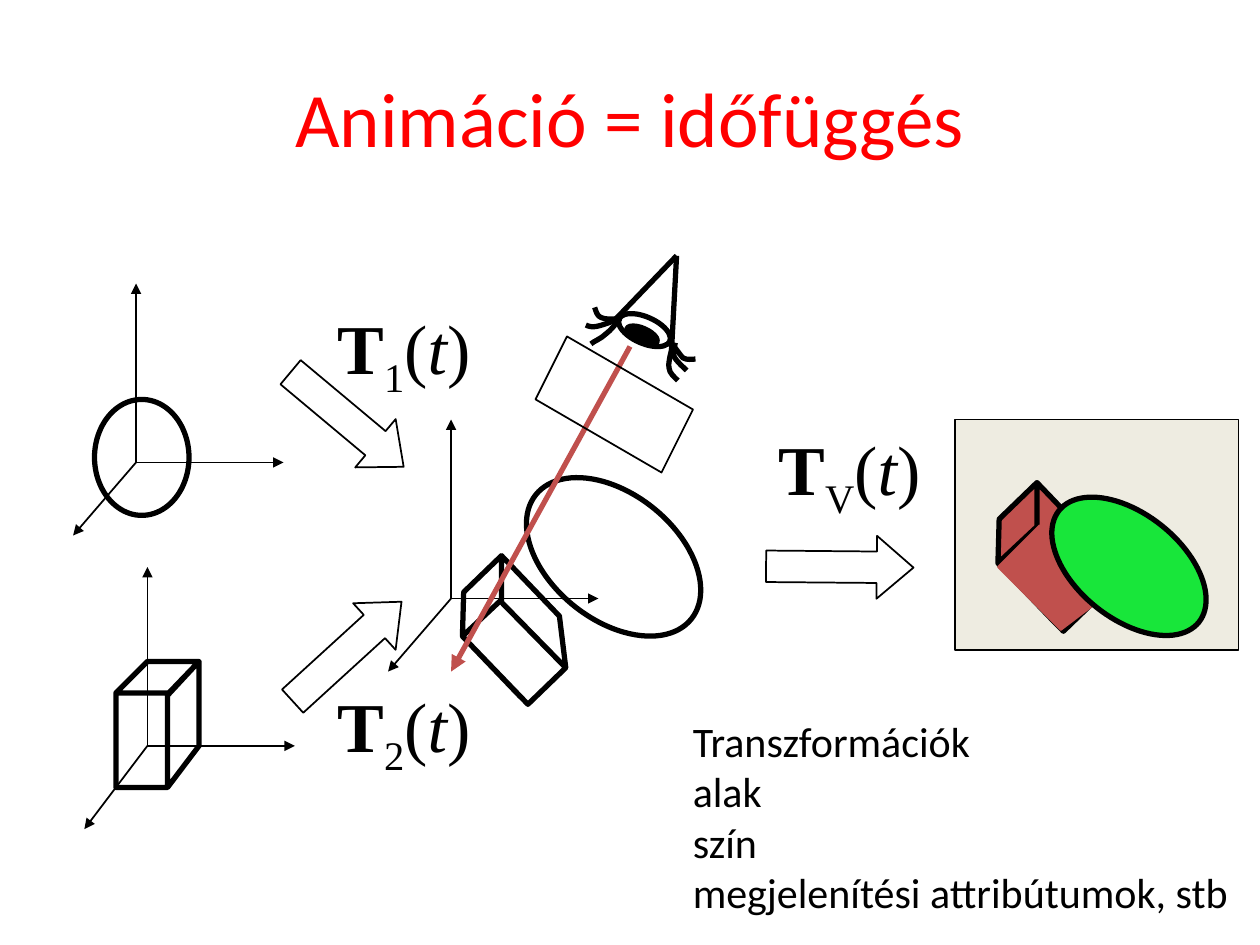
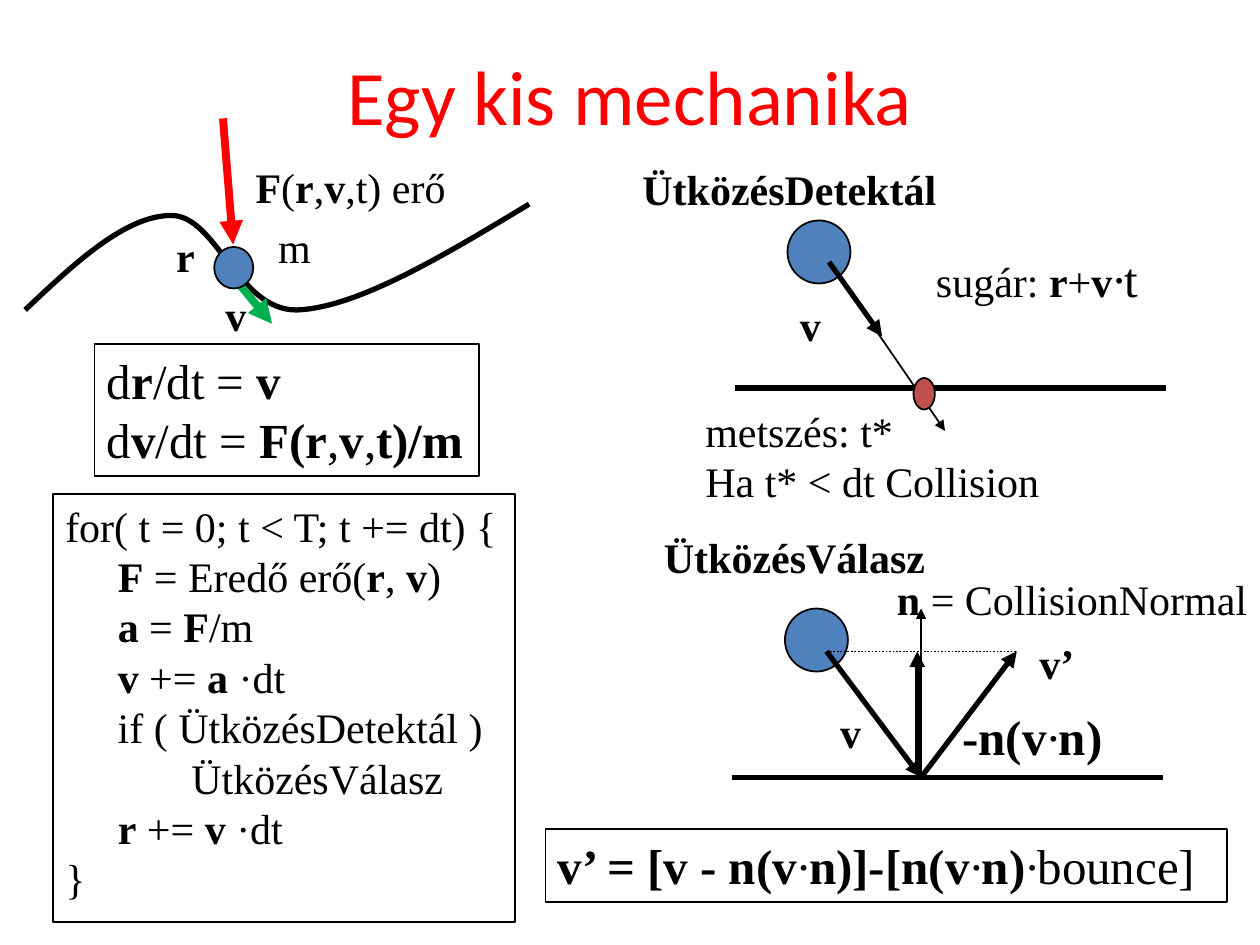
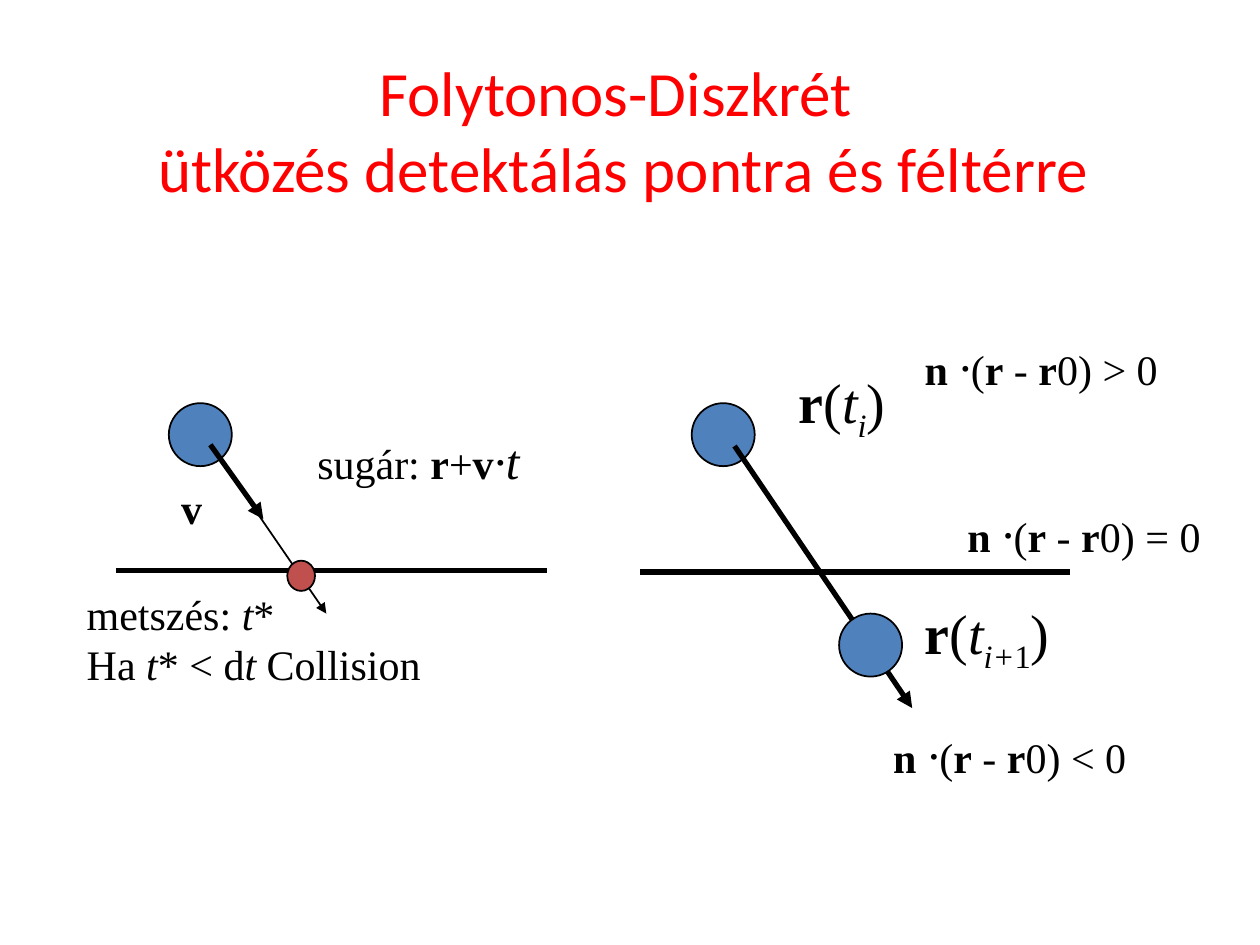
from lxml.etree import SubElement
from pptx import Presentation
from pptx.dml.color import RGBColor
from pptx.enum.dml import MSO_LINE
from pptx.enum.shapes import MSO_CONNECTOR, MSO_SHAPE
from pptx.enum.text import MSO_ANCHOR, MSO_AUTO_SIZE, PP_ALIGN
from pptx.oxml.ns import qn
from pptx.util import Inches, Pt

BLACK, WHITE, RED = "000000", "FFFFFF", "FF0000"
BLUE, BRICK, GREEN, LIME, CREAM = "4F81BD", "C0504D", "00B050", "18E63A", "EEECE1"
THIN, THICK, FORCE = 1, 3, 4.5
SERIF = "Times New Roman"
TITLE_FORMAT = {"name": "Calibri", "size": Pt(44)}
LABEL_FORMAT = {"name": SERIF, "size": Pt(24)}

UPRIGHT_BOX = [(0.92, 6.17), (0.92, 5.5), (1.17, 5.25), (1.58, 5.25), (1.34, 5.5),
               (0.92, 5.5), (0.92, 6.25), (1.33, 6.25), (1.58, 5.92), (1.58, 5.25),
               (1.33, 5.52), (1.33, 6.25)]
TILTED_BOX = [(4.13, 5.53), (3.67, 5.05), (3.68, 4.7), (3.98, 4.41), (3.98, 4.76),
              (3.67, 5.05), (4.19, 5.59), (4.49, 5.3), (4.44, 4.89), (3.98, 4.41),
              (3.98, 4.78), (4.49, 5.3)]
VIEW_WINDOW = [(4.25, 3.17), (4.5, 2.67), (5.5, 3.25), (5.25, 3.75), (4.25, 3.17)]
BOX_FRONT = [(7.92, 4.5), (8.25, 4.17), (8.75, 4.75), (8.42, 5), (7.92, 4.5)]
# Each lash is a start point followed by three points per Bezier segment.
LASHES = [
    [(5.36, 2.72), (5.35, 2.76), (5.34, 2.8), (5.35, 2.83), (5.37, 2.87), (5.43, 2.92), (5.45, 2.94)],
    [(5.33, 2.77), (5.33, 2.79), (5.3, 2.87), (5.31, 2.92), (5.31, 2.96), (5.36, 3), (5.38, 3.02)],
    [(4.92, 2.53), (4.88, 2.58), (4.85, 2.62), (4.81, 2.65), (4.77, 2.69), (4.71, 2.71), (4.69, 2.73)],
    [(4.92, 2.53), (4.89, 2.54), (4.79, 2.58), (4.74, 2.59), (4.7, 2.6), (4.67, 2.59), (4.65, 2.58)],
    [(4.92, 2.53), (4.86, 2.53), (4.81, 2.54), (4.77, 2.52), (4.74, 2.51), (4.73, 2.47), (4.72, 2.44)],
    [(5.35, 2.75), (5.36, 2.76), (5.4, 2.82), (5.42, 2.84), (5.45, 2.86), (5.5, 2.85), (5.52, 2.85)],
]
TRAJECTORY = [(0.2, 2.46), (0.6, 2.08), (1, 1.71), (1.36, 1.71), (1.72, 1.71), (1.89, 2.47),
              (2.36, 2.46), (2.84, 2.44), (3.52, 2.03), (4.2, 1.62)]


def rgb(hex_color):
    return RGBColor.from_string(hex_color)


def bold(text):
    return text, {"bold": True}


def italic(text, **extra):
    return text, {"italic": True, **extra}


def sub(text, **extra):
    return text, {"baseline": -25000, **extra}


DOT = italic("·")
BIG_DOT = italic("·", size=Pt(28))


def style_font(run, fmt, color):
    for name, value in fmt.items():
        if name == "baseline":
            run._r.get_or_add_rPr().set(name, str(value))
        else:
            setattr(run.font, name, value)
    run.font.color.rgb = rgb(color)


def write(frame, paragraphs, size=24):
    """Fill a frame; a paragraph is a list of plain strings and (text, format) runs."""
    frame.word_wrap = False
    frame.auto_size = MSO_AUTO_SIZE.SHAPE_TO_FIT_TEXT
    frame.vertical_anchor = MSO_ANCHOR.TOP
    for number, pieces in enumerate(paragraphs):
        paragraph = frame.add_paragraph() if number else frame.paragraphs[0]
        paragraph.alignment = PP_ALIGN.LEFT
        if pieces[0][0] == "\t":
            tabs = SubElement(paragraph._p.get_or_add_pPr(), qn("a:tabLst"))
            SubElement(tabs, qn("a:tab"), pos=str(Inches(1)), algn="l")
        for piece in pieces:
            text, fmt = (piece, {}) if isinstance(piece, str) else piece
            run = paragraph.add_run()
            run.text = text
            style_font(run, {**LABEL_FORMAT, "size": Pt(size), **fmt}, BLACK)


def title(slide, text, box, size=44):
    frame = slide.shapes.add_textbox(*map(Inches, box)).text_frame
    frame.word_wrap = True
    frame.vertical_anchor = MSO_ANCHOR.MIDDLE
    paragraph = frame.paragraphs[0]
    paragraph.text = text
    paragraph.alignment = PP_ALIGN.CENTER
    for run in paragraph.runs:
        style_font(run, {**TITLE_FORMAT, "size": Pt(size)}, RED)


def label(slide, left, top, width, *paragraphs, size=24):
    box = slide.shapes.add_textbox(*map(Inches, (left, top, width, 0.5 * len(paragraphs))))
    write(box.text_frame, paragraphs, size)


def paint(shape, fill, line, width):
    shape.shadow.inherit = False
    if fill:
        shape.fill.solid()
        shape.fill.fore_color.rgb = rgb(fill)
    else:
        shape.fill.background()
    shape.line.color.rgb = rgb(line)
    shape.line.width = Pt(width)


def preset(slide, kind, box, fill=None, width=THIN, rotation=0):
    shape = slide.shapes.add_shape(kind, *map(Inches, box))
    paint(shape, fill, BLACK, width)
    shape.rotation = rotation
    return shape


def ellipse(slide, box, fill=None, width=THIN, rotation=0):
    preset(slide, MSO_SHAPE.OVAL, box, fill, width, rotation)


def ball(slide, left, top):
    ellipse(slide, (left, top, 0.5, 0.5), BLUE)


def block_arrow(slide, left, top, rotation):
    arrow = preset(slide, MSO_SHAPE.RIGHT_ARROW, (left, top, 1.17, 0.5), rotation=rotation)
    arrow.adjustments[1] = 0.583


def framed_text(slide, box, *paragraphs, size=24):
    frame = preset(slide, MSO_SHAPE.RECTANGLE, box)
    write(frame.text_frame, paragraphs, size)


def line(slide, start, end, width=THIN, color=BLACK, head=False, dash=None):
    connector = slide.shapes.add_connector(MSO_CONNECTOR.STRAIGHT, *map(Inches, (*start, *end)))
    connector.line.color.rgb = rgb(color)
    connector.line.width = Pt(width)
    if dash:
        connector.line.dash_style = dash
    if head:
        SubElement(connector.line._get_or_add_ln(), qn("a:tailEnd"), type="triangle")
    SubElement(connector._element.spPr, qn("a:effectLst"))


def arrow(slide, start, end, width=THIN, color=BLACK):
    line(slide, start, end, width, color, head=True)


def outline(slide, points, fill=None, color=BLACK, width=THICK):
    start, *rest = [(Inches(x), Inches(y)) for x, y in points]
    builder = slide.shapes.build_freeform(*start)
    builder.add_line_segments(rest, close=points[0] == points[-1])
    shape = builder.convert_to_shape()
    paint(shape, fill, color, width)
    return shape


def curve(slide, controls):
    """Draw joined cubic Bezier segments by merging each three line steps into one."""
    shape = outline(slide, controls)
    steps = list(shape._element.iter(qn("a:lnTo")))
    for first in range(0, len(steps), 3):
        bezier, *others = steps[first:first + 3]
        bezier.tag = qn("a:cubicBezTo")
        for step in others:
            bezier.append(step[0])
            step.getparent().remove(step)


def axes(slide, x, y, depth=0.58):
    for dx, dy in ((0, -1.42), (1.17, 0), (-0.5, depth)):
        arrow(slide, (x, y), (x + dx, y + dy))


def eye(slide):
    for corner in ((5.33, 2.77), (4.86, 2.56)):
        line(slide, (5.37, 2.03), corner, THICK)
    ellipse(slide, (5.01, 2.4, 0.21, 0.44), WHITE, THICK, 113.8)
    ellipse(slide, (5.04, 2.53, 0.11, 0.26), BLACK, THICK, 113.8)
    for lash in LASHES:
        curve(slide, lash)


def ray_collision(slide, x, y, hit_box, ray_time, *result):
    """Ball at x, y whose ray meets the plane below it."""
    ball(slide, x, y)
    center = (x + 0.33, y + 0.33)
    arrow(slide, center, (x + 0.75, y + 0.92), THICK)
    line(slide, (x - 0.42, y + 1.33), (x + 3, y + 1.33), THICK)
    label(slide, x, y + 0.58, 0.37, [bold("v")])
    arrow(slide, center, (x + 1.25, y + 1.67))
    label(slide, x + 1.08, y + 0.17, 1.84, ["sugár: ", bold("r"), "+", bold("v"), *ray_time])
    ellipse(slide, hit_box, BRICK)
    label(slide, x - 0.75, y + 1.42, 2.86, *result)


def animation_slide(slide):
    title(slide, "Animáció = időfüggés", (0.5, 0.3, 9, 1.25))
    axes(slide, 1.08, 3.67)
    ellipse(slide, (0.75, 3.17, 0.75, 0.92), width=THICK)
    axes(slide, 1.17, 5.92, depth=0.66)
    outline(slide, UPRIGHT_BOX)
    axes(slide, 3.58, 4.75)
    ellipse(slide, (4.08, 3.92, 1.58, 1), width=THICK, rotation=38.6)
    outline(slide, TILTED_BOX)
    eye(slide)
    arrow(slide, (5, 2.75), (3.58, 5.33), THICK, BRICK)
    for left, top, rotation in ((2.17, 3.08, 39.9), (2.17, 4.92, 317.6), (6.08, 4.25, 0.5)):
        block_arrow(slide, left, top, rotation)
    outline(slide, VIEW_WINDOW, width=THIN)
    for index, left, top, width in (("1", 2.58, 2.37, 1.28), ("2", 2.58, 5.37, 1.28),
                                    ("V", 6.08, 3.33, 1.37)):
        label(slide, left, top, width, [bold("T"), sub(index), "(", italic("t"), ")"], size=40)
    preset(slide, MSO_SHAPE.RECTANGLE, (7.58, 3.33, 2.25, 1.83), CREAM)
    outline(slide, [(x + 4.25, y - 0.58) for x, y in TILTED_BOX], BRICK)
    outline(slide, BOX_FRONT, BRICK, BRICK, THIN)
    ellipse(slide, (8.25, 4.08, 1.42, 0.83), LIME, THICK, 38.6)
    time_dependent = ("Transzformációk", "alak", "szín", "megjelenítési attribútumok, stb")
    label(slide, 5.4, 5.63, 4.5, *[[(text, {"name": "Calibri"})] for text in time_dependent])


def bounce(slide):
    ball(slide, 6.23, 4.83)
    impact, start, end = (7.31, 6.17), (6.56, 5.17), (8.07, 5.17)
    arrow(slide, start, impact, THICK)
    line(slide, (5.81, 6.17), (9.23, 6.17), THICK)
    arrow(slide, impact, end, THICK)
    arrow(slide, impact, (7.31, 4.83))
    line(slide, start, end, dash=MSO_LINE.ROUND_DOT)
    arrow(slide, (7.28, 6.11), (7.28, 5.17), THICK)
    label(slide, 6.57, 5.56, 0.37, [bold("v")])
    label(slide, 7.02, 4.5, 2.98, [bold("n"), " = CollisionNormal"])
    label(slide, 8.15, 5.01, 0.48, [bold("v’")])
    label(slide, 7.54, 5.56, 1.32, [bold("-n(v"), DOT, bold("n)")], size=28)
    framed_text(slide, (4.33, 6.58, 5.41, 0.58),
                [bold("v’ = [v - n(v"), DOT, bold("n)]-[n(v"), DOT, bold("n)"), DOT, "bounce]"],
                size=28)


def mechanics_slide(slide):
    title(slide, "Egy kis mechanika", (0, 0.13, 10, 1.25))
    arrow(slide, (1.77, 0.94), (1.85, 1.94), FORCE, RED)
    label(slide, 1.93, 1.23, 1.72, [bold("F"), "(", bold("r"), ",", bold("v"), ",t) erő"])
    label(slide, 2.11, 1.71, 0.46, ["m"])
    framed_text(slide, (0.42, 3.92, 3.67, 3.4),
                ["for( t = 0; t < T; t += dt) {"],
                ["     ", bold("F"), " = Eredő erő(", bold("r"), ", ", bold("v"), ")"],
                ["     ", bold("a"), " = ", bold("F"), "/m"],
                ["     ", bold("v"), " += ", bold("a "), "·dt"],
                ["     if ( ÜtközésDetektál )"],
                ["\tÜtközésVálasz"],
                ["     ", bold("r"), " += ", bold("v "), "·dt"],
                ["}"])
    curve(slide, TRAJECTORY)
    bounce(slide)
    ray_collision(slide, 6.25, 1.75, (7.25, 3, 0.17, 0.25), [BIG_DOT, ("t", {"size": Pt(28)})],
                  ["metszés: t*"], ["Ha t* < dt Collision"])
    label(slide, 5, 1.25, 2.53, [bold("ÜtközésDetektál")])
    label(slide, 5.17, 4.17, 2.28, [bold("ÜtközésVálasz")])
    framed_text(slide, (0.75, 2.73, 3.05, 1.05),
                ["d", bold("r"), "/dt = ", bold("v")],
                ["d", bold("v"), "/dt = ", bold("F(r"), ",", bold("v"), ",", bold("t)/m")],
                size=28)
    arrow(slide, (1.77, 2.1), (2.16, 2.57), FORCE, GREEN)
    label(slide, 1.3, 1.78, 0.35, [bold("r")])
    ellipse(slide, (1.7, 1.96, 0.31, 0.33), BLUE)
    label(slide, 1.69, 2.25, 0.37, [bold("v")])


def detection_slide(slide):
    title(slide, "Folytonos-Diszkrét \vütközés detektálás pontra és féltérre",
          (0.26, 0.4, 9.37, 1.25), size=36)
    ball(slide, 5.49, 3.2)
    arrow(slide, (5.83, 3.54), (7.24, 5.62), THICK)
    line(slide, (5.08, 4.54), (8.49, 4.54), THICK)
    for left, top, width, index in ((6.24, 2.87, 0.9, [sub("i", italic=True)]),
                                    (7.24, 4.7, 1.26, [sub("i+", italic=True), sub("1")])):
        label(slide, left, top, width, [bold("r"), "(", italic("t"), *index, ")"], size=32)
    ball(slide, 6.66, 4.87)
    for left, top, sign in ((7.58, 3.95, "="), (7.24, 2.62, ">"), (6.99, 5.7, "<")):
        label(slide, left, top, 2.05,
              [bold("n "), BIG_DOT, "(", bold("r"), " - ", bold("r"), f"0) {sign} 0"])
    ray_collision(slide, 1.34, 3.2, (2.28, 4.45, 0.22, 0.24), [italic("·t", size=Pt(28))],
                  ["metszés: ", italic("t"), "*"],
                  ["Ha ", italic("t"), "* < d", italic("t"), " Collision"])


def main():
    deck = Presentation()
    deck.slide_width, deck.slide_height = Inches(10), Inches(7.5)
    for build in (animation_slide, mechanics_slide, detection_slide):
        build(deck.slides.add_slide(deck.slide_layouts[6]))
    deck.save("out.pptx")


if __name__ == "__main__":
    main()
